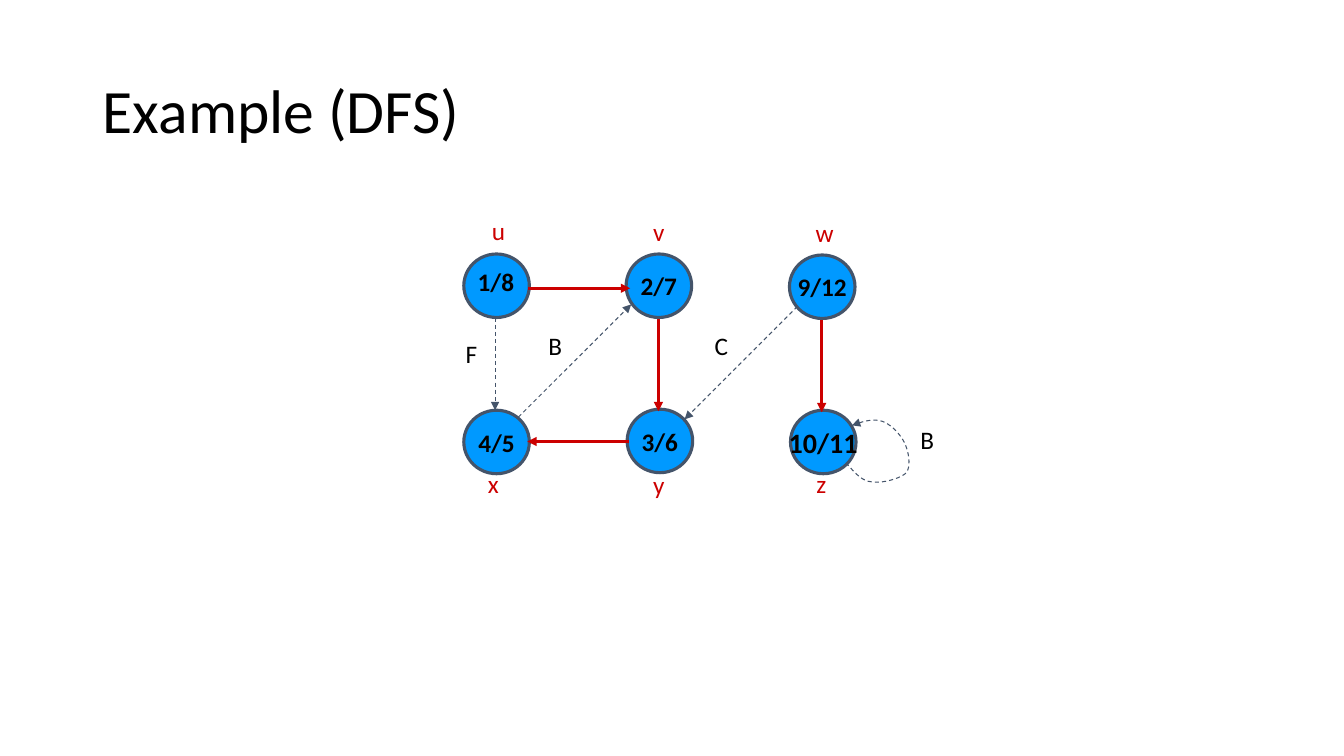
from dataclasses import dataclass
from typing import Any

from pptx import Presentation
from pptx.dml.color import RGBColor
from pptx.enum.dml import MSO_LINE
from pptx.enum.shapes import MSO_CONNECTOR, MSO_SHAPE
from pptx.enum.text import MSO_ANCHOR, MSO_AUTO_SIZE, PP_ALIGN
from pptx.oxml.ns import qn
from pptx.util import Inches, Pt

OVAL = MSO_SHAPE.OVAL
STRAIGHT = MSO_CONNECTOR.STRAIGHT
DASH = MSO_LINE.DASH
LEFT, CENTER = PP_ALIGN.LEFT, PP_ALIGN.CENTER
TOP, MIDDLE = MSO_ANCHOR.TOP, MSO_ANCHOR.MIDDLE
NO_FIT, GROW = MSO_AUTO_SIZE.NONE, MSO_AUTO_SIZE.SHAPE_TO_FIT_TEXT

Point = tuple[float, float]


@dataclass(frozen=True)
class Theme:
    font: str = "Calibri"
    ink: str = "000000"
    red: str = "CC0000"
    slate: str = "44546A"
    blue: str = "0099FF"
    title: int = 44
    large: int = 20
    text: int = 18
    thick: float = 2.25
    thin: float = 0.75


@dataclass(frozen=True)
class Node:
    text: str
    left: float
    top: float
    size: int = Theme.text


@dataclass(frozen=True)
class Edge:
    start: Point
    end: Point
    tree: bool = False


@dataclass(frozen=True)
class Tag:
    text: str
    left: float
    top: float
    width: float
    color: str = Theme.ink
    bold: bool = False


THEME = Theme()
NODE_W, NODE_H, TAG_H = 0.65, 0.63, 0.4

NODES = [
    Node("", 4.6, 2.52),
    Node("2/7", 6.21, 2.52),
    Node("9/12", 7.83, 2.53),
    Node("4/5", 4.6, 4.07),
    Node("3/6", 6.22, 4.06),
    Node("10/11", 7.84, 4.07, THEME.large),
]
EDGES = [
    Edge((5.24, 2.86), (6.25, 2.86), True),
    Edge((6.53, 3.16), (6.53, 4.08), True),
    Edge((6.24, 4.38), (5.23, 4.38), True),
    Edge((8.15, 3.17), (8.15, 4.09), True),
    Edge((4.91, 3.15), (4.91, 4.07)),
    Edge((5.14, 4.14), (6.26, 3.02)),
    Edge((7.91, 3.04), (6.79, 4.16)),
]
TAGS = [
    Tag("1/8", 4.64, 2.59, 0.57, bold=True),
    Tag("u", 4.78, 2.09, 0.34, THEME.red),
    Tag("v", 6.38, 2.1, 0.32, THEME.red),
    Tag("w", 7.99, 2.11, 0.38, THEME.red),
    Tag("x", 4.74, 4.6, 0.31, THEME.red),
    Tag("y", 6.38, 4.61, 0.32, THEME.red),
    Tag("z", 8, 4.6, 0.3, THEME.red),
    Tag("B", 5.34, 3.23, 0.34),
    Tag("F", 4.52, 3.31, 0.32),
    Tag("C", 6.99, 3.23, 0.34),
    Tag("B", 9.03, 4.16, 0.34),
]
LOOP = [
    (8.39, 4.59), (8.47, 4.68), (8.54, 4.77), (8.64, 4.78),
    (8.74, 4.8), (8.93, 4.75), (8.99, 4.69),
    (9.04, 4.62), (9.01, 4.47), (8.97, 4.39),
    (8.93, 4.31), (8.84, 4.21), (8.75, 4.18),
    (8.66, 4.15), (8.56, 4.18), (8.45, 4.22),
]


def write(shape: Any, text: str, *, size: int = THEME.text, color: str = THEME.ink,
          bold: bool = False, align: Any = LEFT, anchor: Any = TOP,
          wrap: bool = False, fit: Any = NO_FIT, space: float = 1.0) -> None:
    frame = shape.text_frame
    frame.word_wrap = wrap
    frame.auto_size = fit
    frame.vertical_anchor = anchor
    para = frame.paragraphs[0]
    para.alignment = align
    para.line_spacing = space
    run = para.add_run()
    run.text = text
    run.font.name = THEME.font
    run.font.size = Pt(size)
    run.font.bold = bold
    run.font.color.rgb = RGBColor.from_string(color)


def stroke(shape: Any, color: str, width: float) -> None:
    shape.line.color.rgb = RGBColor.from_string(color)
    shape.line.width = Pt(width)


def point(shape: Any, tree: bool) -> None:
    if tree:
        stroke(shape, THEME.red, THEME.thick)
    else:
        stroke(shape, THEME.slate, THEME.thin)
        shape.line.dash_style = DASH
    line = shape._element.spPr.find(qn("a:ln"))
    tip = line.makeelement(qn("a:tailEnd"), {"type": "triangle"})
    line.append(tip)


def draw_node(slide: Any, node: Node) -> None:
    oval = slide.shapes.add_shape(OVAL, Inches(node.left), Inches(node.top),
                                  Inches(NODE_W), Inches(NODE_H))
    oval.shadow.inherit = False
    oval.fill.solid()
    oval.fill.fore_color.rgb = RGBColor.from_string(THEME.blue)
    stroke(oval, THEME.slate, THEME.thick)
    if node.text:
        write(oval, node.text, size=node.size, bold=True, align=CENTER, anchor=MIDDLE)


def draw_edge(slide: Any, edge: Edge) -> None:
    ends = [Inches(value) for value in edge.start + edge.end]
    arrow = slide.shapes.add_connector(STRAIGHT, *ends)
    point(arrow, edge.tree)
    props = arrow._element.spPr
    props.append(props.makeelement(qn("a:effectLst"), {}))


def draw_tag(slide: Any, tag: Tag) -> None:
    box = slide.shapes.add_textbox(Inches(tag.left), Inches(tag.top),
                                   Inches(tag.width), Inches(TAG_H))
    write(box, tag.text, color=tag.color, bold=tag.bold, fit=GROW)


def bezier(knots: list[Point], t: float) -> Point:
    while len(knots) > 1:
        knots = [(a + (c - a) * t, b + (d - b) * t)
                 for (a, b), (c, d) in zip(knots, knots[1:])]
    return knots[0]


def draw_loop(slide: Any, knots: list[Point], steps: int = 10) -> None:
    spots = [bezier(knots[i:i + 4], step / steps)
             for i in range(0, len(knots) - 1, 3) for step in range(1, steps + 1)]
    start, *rest = [(Inches(x), Inches(y)) for x, y in [knots[0], *spots]]
    pen = slide.shapes.build_freeform(*start)
    pen.add_line_segments(rest, close=False)
    curve = pen.convert_to_shape()
    curve.shadow.inherit = False
    curve.fill.background()
    point(curve, False)


def main() -> None:
    deck = Presentation()
    deck.slide_width, deck.slide_height = Inches(13.33), Inches(7.5)
    slide = deck.slides.add_slide(deck.slide_layouts[5])
    title = slide.shapes.title
    title.left, title.top = Inches(0.92), Inches(0.4)
    title.width, title.height = Inches(11.5), Inches(1.45)
    write(title, "Example (DFS)", size=THEME.title, anchor=MIDDLE, wrap=True, space=0.9)
    for node in NODES:
        draw_node(slide, node)
    for edge in EDGES:
        draw_edge(slide, edge)
    draw_loop(slide, LOOP)
    for tag in TAGS:
        draw_tag(slide, tag)
    deck.save("out.pptx")


if __name__ == "__main__":
    main()
